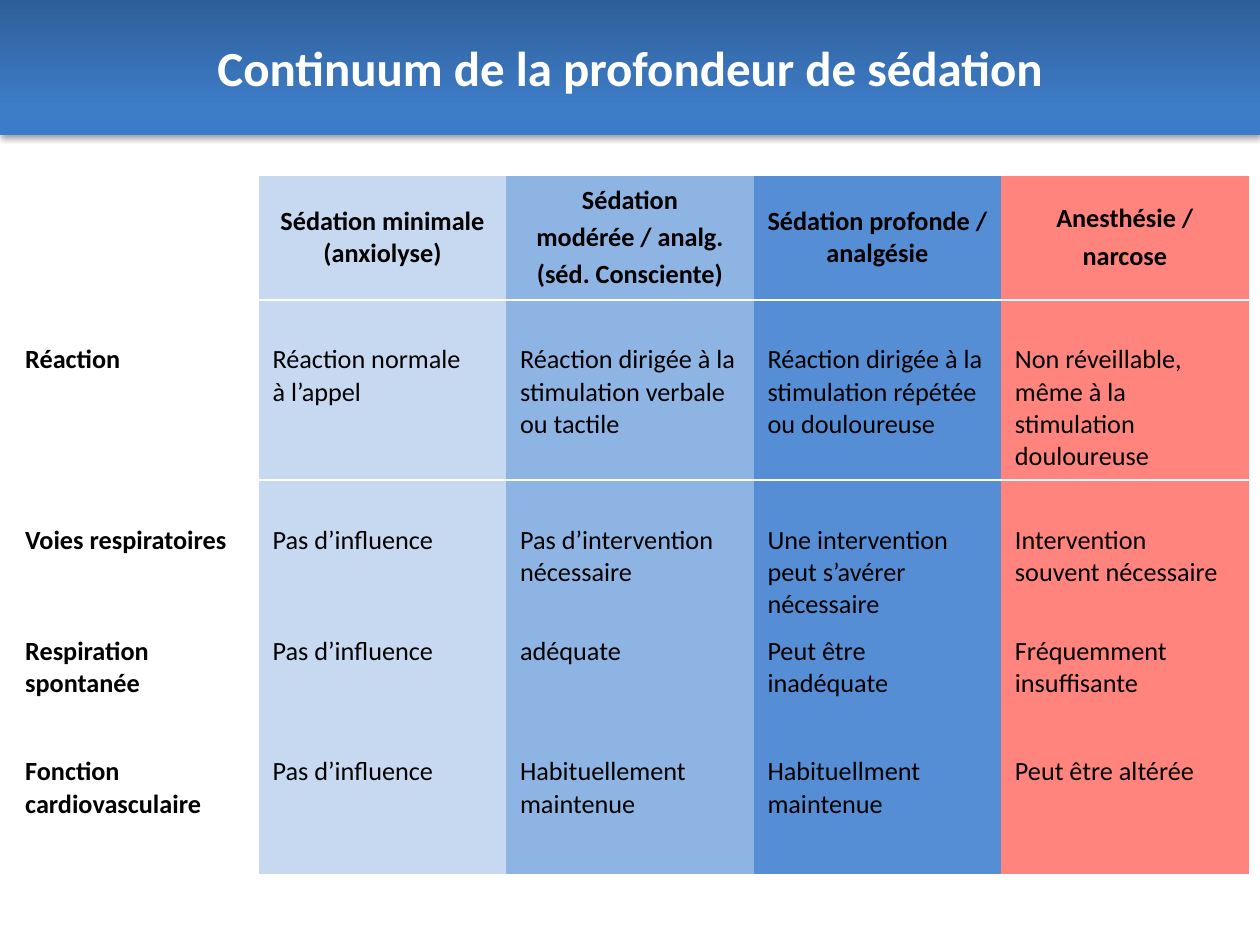
from copy import deepcopy
from dataclasses import dataclass

from lxml import etree
from pptx import Presentation
from pptx import util as u
from pptx.dml.color import RGBColor
from pptx.enum import shapes, text
from pptx.oxml import ns


@dataclass(frozen=True)
class Theme:
    """Colours, font and type sizes of the slide."""
    font: str = "Calibri"
    title_size: int = 28
    table_size: int = 15
    white: str = "FFFFFF"
    black: str = "000000"
    banner: tuple = ((0, "2F5F99"), (0.8, "3D7CC7"), (1, "3A7CCB"))
    columns: tuple = (None, "C6D9F1", "8EB4E3", "558ED5", "FF847E")


THEME = Theme()
TITLE = "Continuum de la profondeur de sédation"
HEADERS = (
    "",
    "Sédation minimale (anxiolyse)",
    "Sédation\nmodérée / analg.\n(séd. Consciente)",
    "Sédation profonde / analgésie",
    "Anesthésie /\nnarcose",
)
CRITERIA = (
    ("Réaction", "Réaction normale \và l’appel",
     "Réaction dirigée à la stimulation verbale ou tactile",
     "Réaction dirigée à la stimulation répétée ou douloureuse",
     "Non réveillable, même à la stimulation douloureuse"),
    ("Voies respiratoires", "Pas d’influence", "Pas d’intervention nécessaire",
     "Une intervention peut s’avérer nécessaire",
     "Intervention souvent nécessaire"),
    ("Respiration spontanée", "Pas d’influence", "adéquate",
     "Peut être inadéquate", "Fréquemment insuffisante"),
    ("Fonction cardiovasculaire", "Pas d’influence",
     "Habituellement maintenue", "Habituellment maintenue",
     "Peut être altérée"),
)
ROW_HEIGHTS = (0.99, 1.43, 1.18, 0.96, 0.99)
TOP_MARGINS = (0.05, 0.35, 0.35, 0.05, 0.05)
RULES = {0: ("lnT", "lnB"), 1: ("lnT",), 4: ("lnB",)}
NO_STYLE = "{2D5ABB26-0587-4C30-8999-92F81FD0307C}"


def format_text(frame, size, color, bold, align):
    """Give every paragraph and run of a frame the same look."""
    for para in frame.paragraphs:
        para.alignment = align
        for span in para.runs:
            span.font.name = THEME.font
            span.font.size = u.Pt(size)
            span.font.bold = bold
            span.font.color.rgb = RGBColor.from_string(color)


def add_color(parent, color):
    """Append a solid RGB colour element and return it."""
    return etree.SubElement(parent, ns.qn("a:srgbClr"), val=color)


def fill_gradient(shape, stops):
    """Fill a shape with a top-to-bottom gradient of three stops."""
    shape.fill.gradient()
    shape.fill.gradient_angle = 270
    stop_list = shape.element.find(".//" + ns.qn("a:gsLst"))
    stop_list.append(deepcopy(stop_list[-1]))
    for stop, (position, color) in zip(shape.fill.gradient_stops, stops):
        stop.position = position
        stop.color.rgb = RGBColor.from_string(color)


def add_shadow(shape):
    """Cast a soft shadow straight down."""
    shape.shadow.inherit = False
    effects = shape.element.find(".//" + ns.qn("a:effectLst"))
    shadow = etree.SubElement(
        effects, ns.qn("a:outerShdw"), blurRad=str(u.Pt(3.1)),
        dist=str(u.Pt(1.8)), dir="5400000", rotWithShape="0")
    etree.SubElement(add_color(shadow, THEME.black), ns.qn("a:alpha"), val="35000")


def add_banner(page, width):
    """Draw the title banner across the top."""
    box = page.shapes.add_shape(
        shapes.MSO_SHAPE.RECTANGLE, 0, 0, width, u.Inches(1.07))
    fill_gradient(box, THEME.banner)
    box.line.fill.background()
    add_shadow(box)
    frame = box.text_frame
    frame.text = TITLE
    frame.word_wrap = False
    frame.vertical_anchor = text.MSO_ANCHOR.MIDDLE
    format_text(frame, THEME.title_size, THEME.white, True, text.PP_ALIGN.CENTER)


def add_rules(cell, sides):
    """Draw thin white borders on the given sides of a cell."""
    properties = cell._tc.get_or_add_tcPr()
    for index, side in enumerate(sides):
        line = etree.Element(ns.qn("a:" + side), w=str(u.Pt(1)))
        add_color(etree.SubElement(line, ns.qn("a:solidFill")), THEME.white)
        properties.insert(index, line)


def fill_cell(cell, words, row, column):
    """Write and format one table cell."""
    header = row == 0
    cell.margin_left = cell.margin_right = u.Inches(0.11)
    cell.margin_top = u.Inches(TOP_MARGINS[row])
    cell.margin_bottom = u.Inches(0.05)
    cell.vertical_anchor = text.MSO_ANCHOR.MIDDLE if header else text.MSO_ANCHOR.TOP
    color = THEME.columns[column]
    if color:
        cell.fill.solid()
        cell.fill.fore_color.rgb = RGBColor.from_string(color)
    else:
        cell.fill.background()
    cell.text_frame.text = words
    align = text.PP_ALIGN.CENTER if header else text.PP_ALIGN.LEFT
    format_text(cell.text_frame, THEME.table_size, THEME.black,
                header or column == 0, align)
    for para in cell.text_frame.paragraphs:
        para.space_before = u.Pt(3)
    add_rules(cell, RULES.get(row, ()))


def add_sedation_table(page):
    """Build the table of criteria by depth of sedation."""
    rows = (HEADERS,) + CRITERIA
    frame = page.shapes.add_table(
        len(rows), len(HEADERS), u.Inches(0.09), u.Inches(1.39),
        u.Inches(9.82), u.Inches(sum(ROW_HEIGHTS)))
    frame.element.find(".//" + ns.qn("a:tableStyleId")).text = NO_STYLE
    table = frame.table
    table.first_row = table.horz_banding = False
    for row, (height, entries) in enumerate(zip(ROW_HEIGHTS, rows)):
        table.rows[row].height = u.Inches(height)
        for column, words in enumerate(entries):
            fill_cell(table.cell(row, column), words, row, column)


def main():
    """Create the slide and save the deck."""
    deck = Presentation()
    deck.slide_width, deck.slide_height = u.Inches(10), u.Inches(7.5)
    page = deck.slides.add_slide(deck.slide_layouts[6])
    add_banner(page, deck.slide_width)
    add_sedation_table(page)
    deck.save("out.pptx")


if __name__ == "__main__":
    main()
